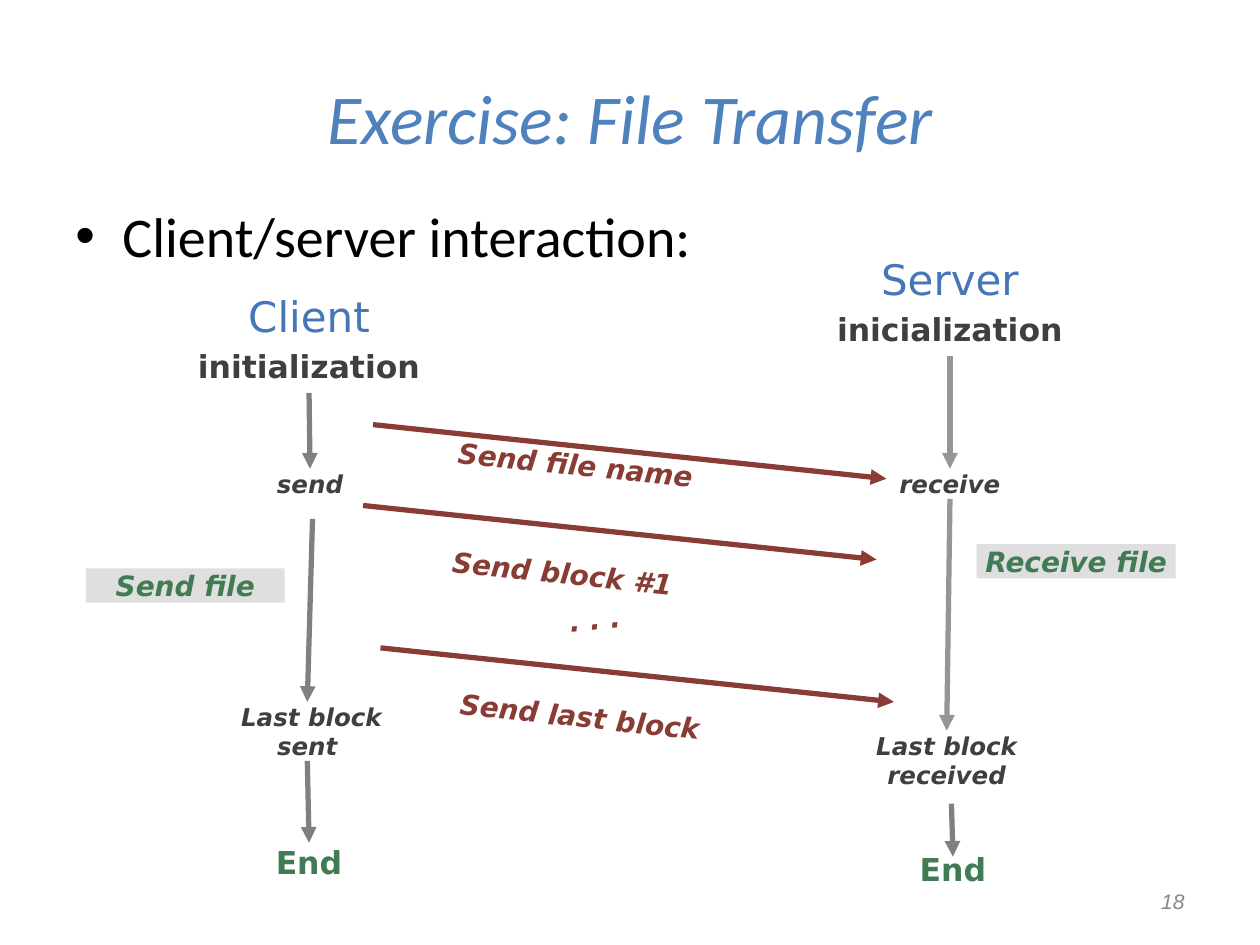
from dataclasses import dataclass
from lxml.etree import SubElement
from pptx import Presentation
from pptx.dml.color import RGBColor
from pptx.enum.shapes import MSO_CONNECTOR, MSO_SHAPE
from pptx.enum.text import MSO_ANCHOR, PP_ALIGN
from pptx.oxml.ns import qn
from pptx.util import Cm, Pt


@dataclass(frozen=True)
class Theme:
    blue: str = "4F81BD"
    role: str = "4476B8"
    dark: str = "3F3F3F"
    green: str = "417B53"
    red: str = "883C34"
    gray: str = "808080"
    light: str = "969696"
    pale: str = "C0C0C0"
    page: str = "898989"
    black: str = "000000"
    sans: str = "DejaVu Sans"
    plain: str = "Calibri"
    small: str = "Arial"
    width: float = 3

    def font(self, size, color, name=None, bold=False, italic=False):
        form = dict(size=Pt(size), name=name or self.sans, bold=bold, italic=italic)
        return form, color


class Board:
    def __init__(self, theme, slide):
        self.theme = theme
        self.slide = slide

    def fill(self, shape, lines, align=PP_ALIGN.CENTER, inset=True, middle=False):
        frame = shape.text_frame
        side, edge = (Cm(0.25), Cm(0.13)) if inset else (0, 0)
        form = dict(
            word_wrap=True,
            vertical_anchor=MSO_ANCHOR.MIDDLE if middle else MSO_ANCHOR.TOP,
            margin_left=side, margin_right=side, margin_top=edge, margin_bottom=edge,
        )
        for key, value in form.items():
            setattr(frame, key, value)
        for row, (text, (style, color)) in enumerate(lines):
            para = frame.add_paragraph() if row else frame.paragraphs[0]
            para.alignment = align
            if row:
                para.space_before = Pt(3.6)
            run = para.add_run()
            run.text = text
            for key, value in style.items():
                setattr(run.font, key, value)
            run.font.color.rgb = RGBColor.from_string(color)
        return shape

    def title(self, text, box):
        shape = self.slide.shapes.title
        for key, value in zip(("left", "top", "width", "height"), box):
            setattr(shape, key, Cm(value))
        font = self.theme.font(40, self.theme.blue, self.theme.plain, italic=True)
        self.fill(shape, [(text, font)], middle=True)

    def text(self, lines, box, **form):
        shape = self.slide.shapes.add_textbox(*map(Cm, box))
        return self.fill(shape, lines, **form)

    def bullet(self, text, box):
        font = self.theme.font(32, self.theme.black, self.theme.plain)
        shape = self.text([(text, font)], box, align=PP_ALIGN.LEFT)
        props = shape.text_frame.paragraphs[0]._p.get_or_add_pPr()
        props.set("marL", str(Cm(0.95)))
        props.set("indent", str(Cm(-0.95)))
        SubElement(props, qn("a:buFont"), typeface="Arial")
        SubElement(props, qn("a:buChar"), char="•")

    def role(self, name, box):
        head = self.theme.font(24, self.theme.role)
        body = self.theme.font(18, self.theme.dark, bold=True)
        return self.text([(name[0], head), (name[1], body)], box)

    def step(self, text, box):
        font = self.theme.font(14, self.theme.dark, bold=True, italic=True)
        return self.text([(text, font)], box, inset=False, middle=True)

    def end(self, box):
        font = self.theme.font(18, self.theme.green, bold=True)
        return self.text([("End", font)], box, inset=False, middle=True)

    def tag(self, text, box):
        shape = self.slide.shapes.add_shape(MSO_SHAPE.RECTANGLE, *map(Cm, box))
        shape.shadow.inherit = False
        shape.line.fill.background()
        shape.fill.solid()
        shape.fill.fore_color.rgb = RGBColor.from_string(self.theme.pale)
        tint = shape._element.spPr.find(".//" + qn("a:srgbClr"))
        SubElement(tint, qn("a:alpha"), val="50000")
        font = self.theme.font(16, self.theme.green, bold=True, italic=True)
        self.fill(shape, [(text, font)], inset=False, middle=True)

    def arrow(self, ends, color, start=None, stop=None):
        link = self.slide.shapes.add_connector(MSO_CONNECTOR.STRAIGHT, *map(Cm, ends))
        link.line.color.rgb = RGBColor.from_string(color)
        link.line.width = Pt(self.theme.width)
        props = link._element.spPr
        SubElement(props.find(qn("a:ln")), qn("a:tailEnd"), type="triangle")
        SubElement(props, qn("a:effectLst"))
        if start is not None:
            link.begin_connect(start, 2)
        if stop is not None:
            link.end_connect(stop, 0)

    def label(self, text, box, turn):
        font = self.theme.font(16, self.theme.red, bold=True, italic=True)
        self.text([(text, font)], box).rotation = turn

    def send(self, text, left, top, gap, height):
        self.arrow((left, top, left + 10.35, top + 1.09), self.theme.red)
        self.label(text, (left + 0.4, top + gap, 7.24, height), 6)


def main():
    deck = Presentation()
    deck.slide_width, deck.slide_height = Cm(25.4), Cm(19.05)
    theme = Theme()
    board = Board(theme, deck.slides.add_slide(deck.slide_layouts[5]))

    board.title("Exercise: File Transfer", (1.27, 0.76, 22.86, 3.18))
    board.bullet("Client/server interaction:", (1.27, 3.94, 22.86, 2.29))

    client = board.role(("Client", "initialization"), (3.73, 5.72, 5, 2.2))
    send = board.step("send", (4.7, 9.45, 3.1, 0.61))
    sent = board.step(" Last block sent", (4.11, 14.15, 4.17, 1.19))
    close = board.end((4.11, 16.99, 4.24, 0.76))
    board.arrow((6.24, 7.92, 6.24, 9.45), theme.gray, client, send)
    board.arrow((6.3, 10.46, 6.22, 14.15), theme.gray, stop=sent)
    board.arrow((6.2, 15.34, 6.24, 16.99), theme.gray, sent, close)
    board.tag("Send file", (1.73, 11.46, 4.01, 0.69))

    server = board.role(("Server", "inicialization"), (16.61, 4.98, 5.08, 2.2))
    receive = board.step("receive", (17.88, 9.45, 2.54, 0.61))
    last = board.step("Last block received", (17.09, 14.73, 3.99, 1.19))
    close = board.end((17.09, 17.27, 4.24, 0.51))
    board.arrow((19.15, 7.18, 19.15, 9.45), theme.light, server, receive)
    board.arrow((19.15, 10.06, 19.1, 14.73), theme.light, receive, last)
    board.arrow((19.18, 16.2, 19.21, 17.27), theme.gray, stop=close)
    board.tag("Receive file", (19.69, 10.97, 4.01, 0.69))

    for text, left, top, gap, height in (
        ("Send file name", 7.52, 8.56, 0.33, 2.08),
        ("Send block #1", 7.32, 10.19, 0.89, 0.94),
        ("Send last block", 7.67, 13.06, 0.91, 0.94),
    ):
        board.send(text, left, top, gap, height)
    board.label(". . .", (11.15, 12.01, 1.68, 0.94), 354)

    font = theme.font(12, theme.page, theme.small, italic=True)
    board.text([("18", font)], (18.21, 17.65, 5.92, 1.02),
               align=PP_ALIGN.RIGHT, middle=True)
    deck.save("out.pptx")


if __name__ == "__main__":
    main()
